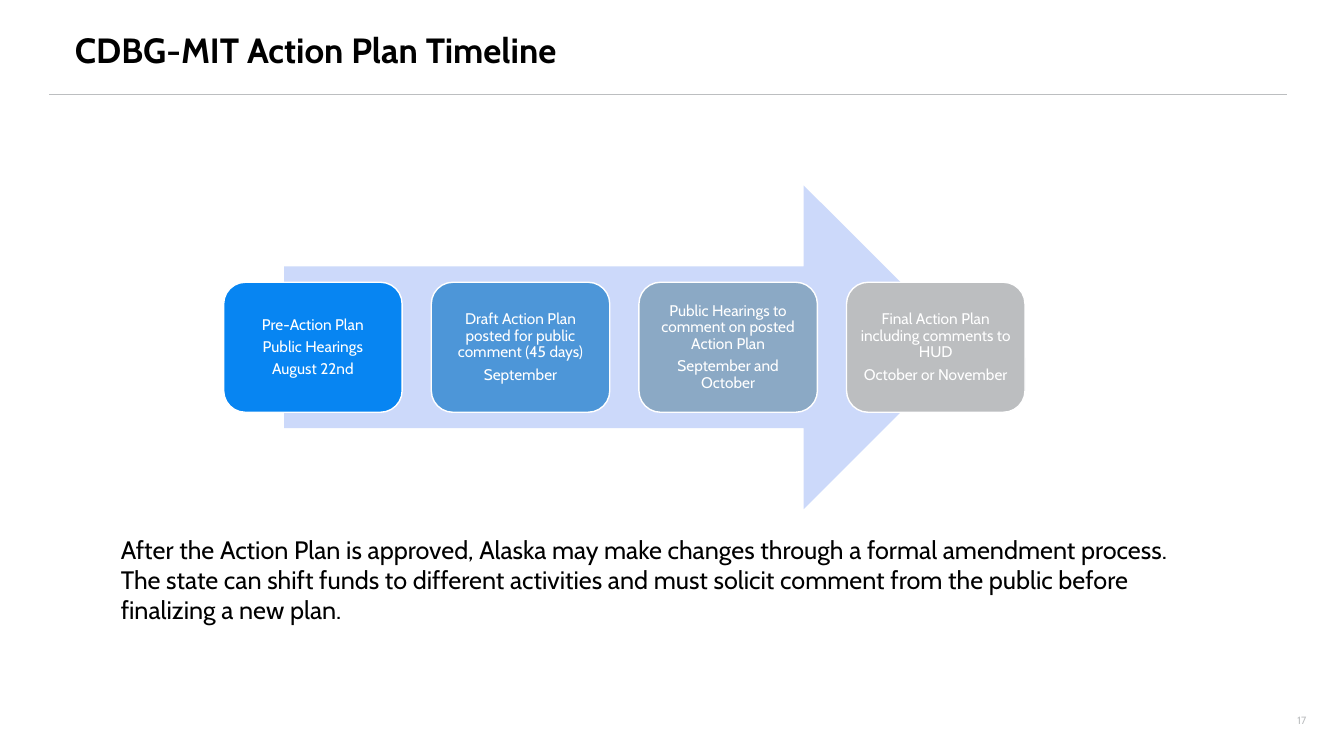
from lxml.etree import SubElement
from pptx import Presentation
from pptx.dml.color import RGBColor
from pptx.enum.shapes import MSO_CONNECTOR, MSO_SHAPE
from pptx.enum.text import MSO_ANCHOR as Anchor, PP_ALIGN as Align
from pptx.oxml.ns import qn
from pptx.util import Pt

FONT = "Cabin"
BLACK, WHITE, GRAY = "000000", "FFFFFF", "BCBEC0"
STEPS = [
    ("0785F2", ["Pre-Action Plan", "Public Hearings", "August 22nd"]),
    ("4D96D8", ["Draft Action Plan posted for public comment (45 days)", "September"]),
    ("8BA9C5", ["Public Hearings to comment on posted Action Plan",
                "September and October"]),
    ("BCBEC0", ["Final Action Plan including comments to HUD", "October or November"]),
]
CARD_LEFT, CARD_TOP, CARD_W, CARD_H, CARD_PITCH = 159.8, 201.6, 127.5, 92.9, 148.3


def rgb(value):
    return RGBColor.from_string(value)


def place(shape, left, top, width, height):
    shape.left, shape.top = Pt(left), Pt(top)
    shape.width, shape.height = Pt(width), Pt(height)


def write(shape, texts, size, color, align=Align.LEFT, anchor=Anchor.TOP,
          margins=(7.2, 3.6, 7.2, 3.6), spacing=1.0, gap=0, bold=False):
    """Fill a shape with one run per paragraph; margins run left, top, right, bottom."""
    tf = shape.text_frame
    tf.word_wrap = True
    tf.vertical_anchor = anchor
    tf.margin_left, tf.margin_top, tf.margin_right, tf.margin_bottom = map(Pt, margins)
    for i, text in enumerate(texts):
        p = tf.add_paragraph() if i else tf.paragraphs[0]
        p.alignment = align
        p.line_spacing = spacing
        p.space_before = Pt(0)
        p.space_after = Pt(gap)
        r = p.add_run()
        r.text = text
        r.font.name, r.font.size, r.font.bold = FONT, Pt(size), bold
        r.font.color.rgb = rgb(color)


def add_text(s, box, text, size, color, **options):
    write(s.shapes.add_textbox(*map(Pt, box)), [text], size, color, **options)


def add_block(s, kind, box, fill, line=None):
    sp = s.shapes.add_shape(kind, *map(Pt, box))
    sp.shadow.inherit = False
    sp.fill.solid()
    sp.fill.fore_color.rgb = rgb(fill)
    if line:
        sp.line.color.rgb = rgb(line)
        sp.line.width = Pt(1)
    else:
        sp.line.fill.background()
    return sp


def add_rule(s, x1, x2, y):
    rule = s.shapes.add_connector(MSO_CONNECTOR.STRAIGHT, Pt(x1), Pt(y), Pt(x2), Pt(y))
    rule.line.color.rgb = rgb(GRAY)
    rule.line.width = Pt(0.5)
    SubElement(rule._element.spPr, qn("a:effectLst"))


def add_step(s, index, fill, texts):
    box = (CARD_LEFT + index * CARD_PITCH, CARD_TOP, CARD_W, CARD_H)
    card = add_block(s, MSO_SHAPE.ROUNDED_RECTANGLE, box, fill, WHITE)
    write(card, texts, 11, WHITE, align=Align.CENTER, anchor=Anchor.MIDDLE,
          margins=(4, 4, 4, 4), spacing=0.9, gap=4)


def main():
    prs = Presentation()
    prs.slide_width, prs.slide_height = Pt(960), Pt(540)
    s = prs.slides.add_slide(prs.slide_layouts[5])

    add_rule(s, 35.3, 919.5, 67.7)
    title = s.shapes.title
    place(title, 47.5, 7.2, 842.4, 59.8)
    write(title, ["CDBG-MIT Action Plan Timeline"], 25, BLACK, anchor=Anchor.MIDDLE,
          margins=(6, 3.6, 0, 3.6), spacing=0.9, bold=True)

    add_block(s, MSO_SHAPE.RIGHT_ARROW, (203, 132.5, 486.7, 231.1), "CCD9FA")
    for i, (fill, texts) in enumerate(STEPS):
        add_step(s, i, fill, texts)

    add_text(s, (79.2, 378, 779.8, 72.7),
             "After the Action Plan is approved, Alaska may make changes through a formal "
             "amendment process. The state can shift funds to different activities and must "
             "solicit comment from the public before finalizing a new plan.", 18, BLACK)
    add_text(s, (750.2, 500.4, 190.1, 28.8), "17", 7.5, GRAY,
             align=Align.RIGHT, anchor=Anchor.MIDDLE)
    prs.save("out.pptx")


if __name__ == "__main__":
    main()
